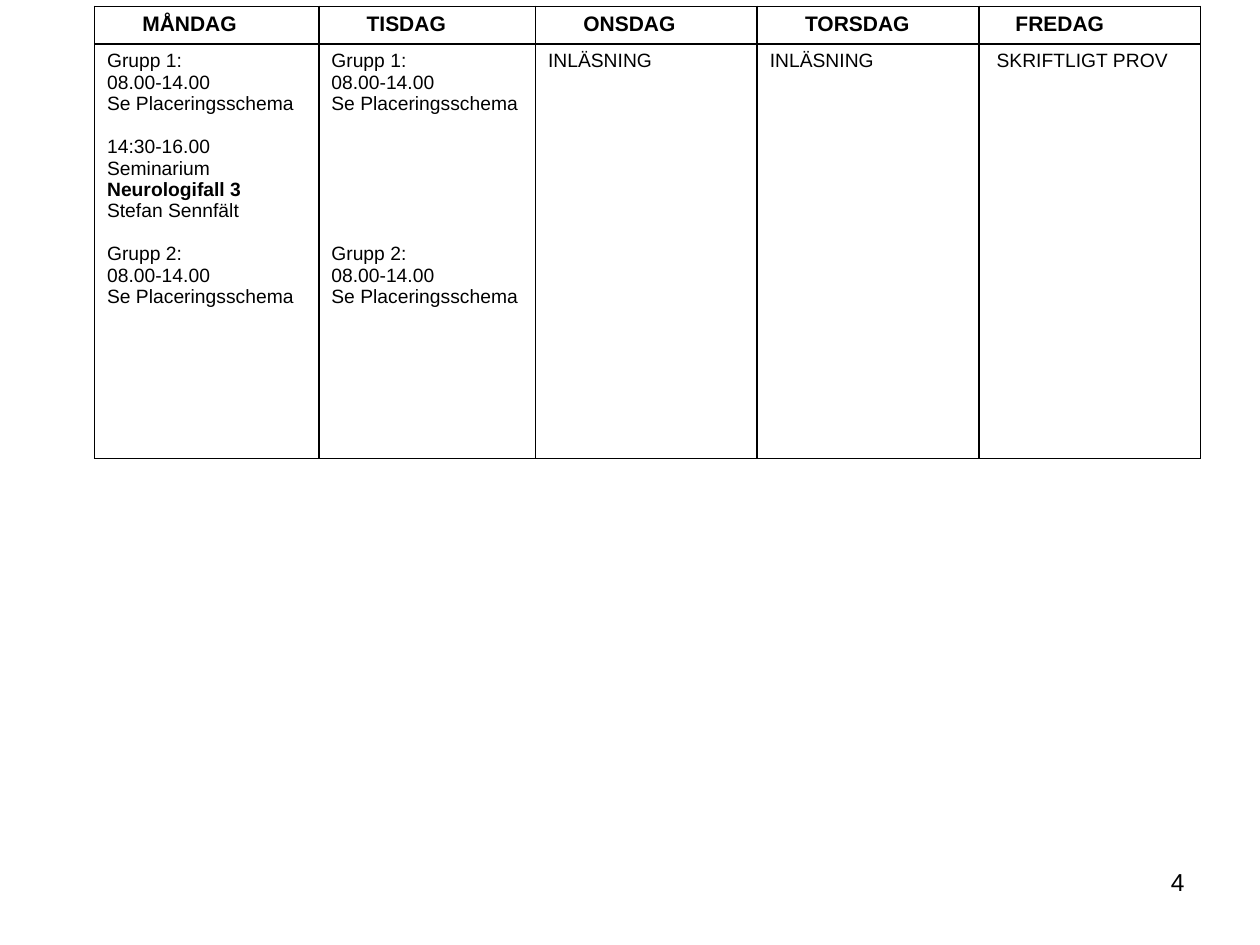
from dataclasses import dataclass

from lxml import etree
from pptx import Presentation
from pptx.dml.color import RGBColor
from pptx.enum.text import PP_ALIGN
from pptx.oxml.ns import qn
from pptx.util import Inches, Pt

RIGHT, JUSTIFY = PP_ALIGN.RIGHT, PP_ALIGN.JUSTIFY


@dataclass(frozen=True)
class Theme:
    font: str = "Arial"
    ink: str = "000000"
    head: float = 12
    body: float = 11
    number: float = 14
    line: float = 12.25  # height of one body line
    border: float = 1


@dataclass(frozen=True)
class Line:
    text: str
    bold: bool = False
    skip: int = 0  # body lines left open above
    indent: float = 0
    align: PP_ALIGN | None = None


@dataclass(frozen=True)
class Day:
    name: str
    width: float
    lines: list[Line]
    head_indent: float = 0.28


THEME = Theme()
ROW_HEIGHTS = (0.3, 3.29)


def group(number: int, skip: int = 0) -> list[Line]:
    return [Line(f"Grupp {number}:", skip=skip), Line("08.00-14.00"),
            Line("Se Placeringsschema")]


SEMINAR = [Line("14:30-16.00", skip=1), Line("Seminarium"),
           Line("Neurologifall 3", bold=True), Line("Stefan Sennfält")]
DAYS = [
    Day("MÅNDAG", 1.78, group(1) + SEMINAR + group(2, skip=1)),
    Day("TISDAG", 1.72, group(1) + group(2, skip=6)),
    Day("ONSDAG", 1.76, [Line("INLÄSNING")]),
    Day("TORSDAG", 1.76, [Line("INLÄSNING", align=JUSTIFY)]),
    Day("FREDAG", 1.76, [Line("SKRIFTLIGT PROV", indent=0.04)], 0.19),
]


def write(tf, lines: list[Line], size: float) -> None:
    """Fill a text frame, one paragraph per line."""
    for i, line in enumerate(lines):
        p = tf.add_paragraph() if i else tf.paragraphs[0]
        p.text = line.text
        p.alignment = line.align
        p.font.name, p.font.size, p.font.bold = THEME.font, Pt(size), line.bold
        p.font.color.rgb = RGBColor.from_string(THEME.ink)
        if line.skip:
            p.space_before = Pt(line.skip * THEME.line)
        if line.indent:
            p._p.get_or_add_pPr().set("marL", str(Inches(line.indent)))


def style_cell(cell) -> None:
    """Clear the fill and rule all four sides."""
    tc_pr = cell._tc.get_or_add_tcPr()
    for side in ("a:lnL", "a:lnR", "a:lnT", "a:lnB"):
        ln = etree.SubElement(tc_pr, qn(side), w=str(Pt(THEME.border)))
        fill = etree.SubElement(ln, qn("a:solidFill"))
        etree.SubElement(fill, qn("a:srgbClr"), val=THEME.ink)
    cell.fill.background()


def add_schedule(s, days: list[Day]) -> None:
    width = sum(day.width for day in days)
    table = s.shapes.add_table(
        len(ROW_HEIGHTS), len(days), Inches(0.75), Inches(0.05),
        Inches(width), Inches(sum(ROW_HEIGHTS))).table
    table.first_row = table.horz_banding = False
    for row, height in zip(table.rows, ROW_HEIGHTS):
        row.height = Inches(height)
    for c, day in enumerate(days):
        table.columns[c].width = Inches(day.width)
        head, body = table.cell(0, c), table.cell(1, c)
        write(head.text_frame,
              [Line(day.name, bold=True, indent=day.head_indent)], THEME.head)
        write(body.text_frame, day.lines, THEME.body)
        style_cell(head)
        style_cell(body)


def add_page_number(s, number: int) -> None:
    tf = s.shapes.add_textbox(
        Inches(7.17), Inches(6.83), Inches(2.33), Inches(0.52)).text_frame
    tf.word_wrap = True
    write(tf, [Line(str(number), align=RIGHT)], THEME.number)


def main() -> None:
    prs = Presentation()
    prs.slide_width, prs.slide_height = Inches(10), Inches(7.5)
    s = prs.slides.add_slide(prs.slide_layouts[6])  # blank: no title here
    add_page_number(s, 4)
    add_schedule(s, DAYS)
    prs.save("out.pptx")


if __name__ == "__main__":
    main()
